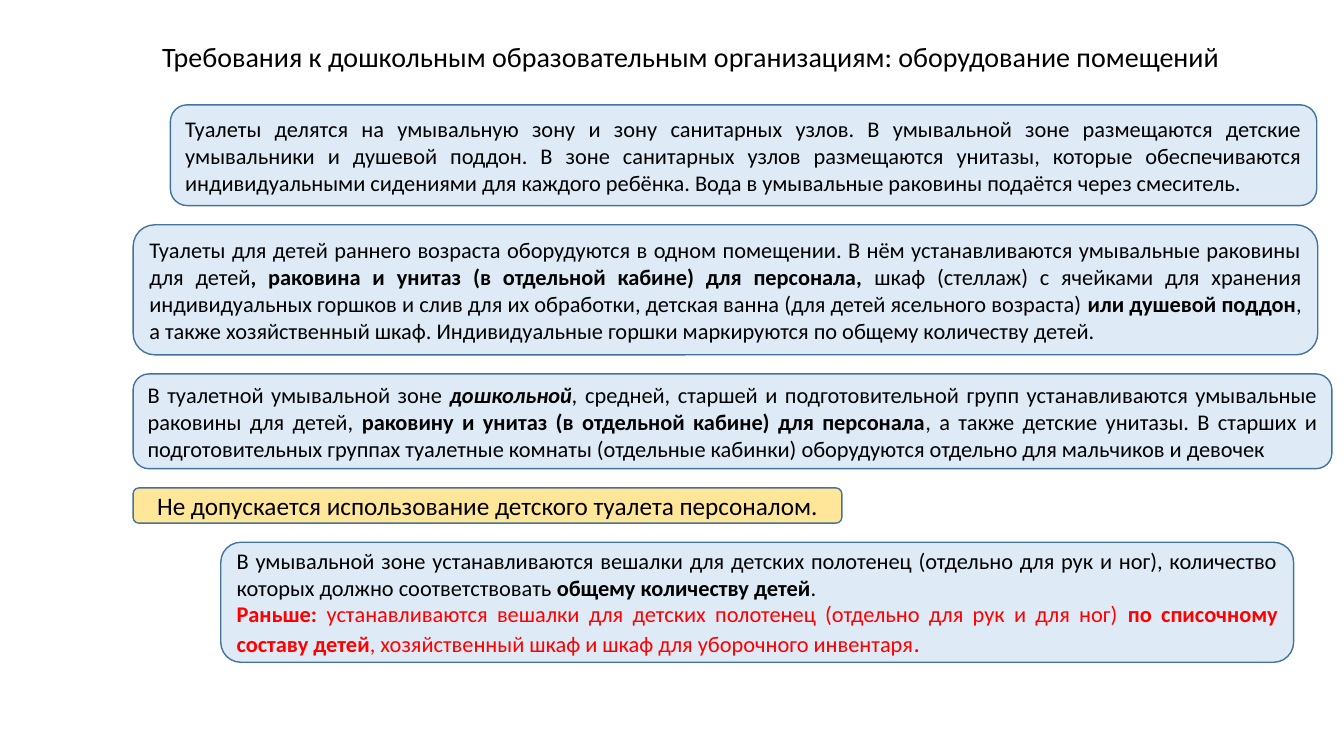
import pptx
import pptx.dml.color
import pptx.enum.shapes
import pptx.enum.text
import pptx.util

Inches = pptx.util.Inches
RGBColor = pptx.dml.color.RGBColor
ALIGN = pptx.enum.text.PP_ALIGN

BLACK = RGBColor(0x00, 0x00, 0x00)
RED = RGBColor(0xFF, 0x00, 0x00)
PALE_BLUE = RGBColor(0xDE, 0xEB, 0xF7)
PALE_YELLOW = RGBColor(0xFF, 0xE6, 0x99)
OUTLINE = RGBColor(0x43, 0x73, 0x9E)

BOLD = {"bold": True}
ITALIC = {"italic": True}
BOLD_ITALIC = {"bold": True, "italic": True}

TITLE = "Требования к дошкольным образовательным организациям: оборудование помещений"

# Each paragraph is a list of (text, format) runs
ZONES = [[
    ("Туалеты делятся на умывальную зону и зону санитарных узлов. В умывальной зоне "
     "размещаются детские умывальники и душевой поддон. В зоне санитарных узлов "
     "размещаются унитазы, которые обеспечиваются индивидуальными сидениями для "
     "каждого ребёнка. Вода в умывальные раковины подаётся через смеситель. ", {}),
]]
EARLY_AGE = [[
    ("Туалеты для детей раннего возраста оборудуются в одном помещении. В нём "
     "устанавливаются умывальные раковины для детей", {}),
    (", раковина и унитаз (в отдельной кабине) для персонала, ", BOLD),
    ("шкаф (стеллаж) с ячейками для хранения индивидуальных горшков и слив для их "
     "обработки, детская ванна (для детей ясельного возраста) ", {}),
    ("или душевой поддон", BOLD),
    (", а также хозяйственный шкаф. Индивидуальные горшки маркируются по общему "
     "количеству детей.", {}),
]]
PRESCHOOL = [[
    ("В туалетной умывальной зоне ", {}),
    ("дошкольной", BOLD_ITALIC),
    (",", ITALIC),
    (" средней, старшей и подготовительной групп устанавливаются умывальные раковины "
     "для детей, ", {}),
    ("раковину и унитаз (в отдельной кабине) для персонала", BOLD),
    (", а также детские унитазы. В старших и подготовительных группах туалетные "
     "комнаты (отдельные кабинки) оборудуются отдельно для мальчиков и девочек", {}),
]]
BAN = [[("Не допускается использование детского туалета персоналом.", {})]]
TOWELS = [
    [
        ("В умывальной зоне устанавливаются вешалки для детских полотенец (отдельно для "
         "рук и ног), количество которых должно соответствовать ", {}),
        ("общему количеству детей", BOLD),
        (".", {}),
    ],
    [
        ("Раньше:", {"bold": True, "color": RED}),
        (" устанавливаются вешалки для детских полотенец (отдельно для рук и для ног) ",
         {"color": RED}),
        ("по списочному составу детей", {"bold": True, "color": RED}),
        (", хозяйственный шкаф и шкаф для уборочного инвентаря", {"color": RED}),
        (".", {"size": 18, "color": RED}),
    ],
]

# Left, width, height, fill, alignment, text size, paragraphs
PANELS = [
    (1.69, 11.37, 1.0, PALE_BLUE, ALIGN.JUSTIFY, 16, ZONES),
    (1.32, 11.75, 1.29, PALE_BLUE, ALIGN.JUSTIFY, 16, EARLY_AGE),
    (1.32, 11.89, 0.94, PALE_BLUE, ALIGN.JUSTIFY, 16, PRESCHOOL),
    (1.32, 7.03, 0.35, PALE_YELLOW, ALIGN.CENTER, 18, BAN),
    (2.19, 10.64, 1.19, PALE_BLUE, ALIGN.JUSTIFY, 16, TOWELS),
]
PANELS_TOP = 1.04
PANEL_GAP = 0.19


def write_text(text_frame, paragraphs, size, **paragraph_format):
    text_frame.word_wrap = True
    text_frame.vertical_anchor = pptx.enum.text.MSO_ANCHOR.MIDDLE
    for index, runs in enumerate(paragraphs):
        paragraph = text_frame.paragraphs[0] if index == 0 else text_frame.add_paragraph()
        for name, value in paragraph_format.items():
            setattr(paragraph, name, value)
        for text, changes in runs:
            run = paragraph.add_run()
            run.text = text
            values = {"name": "Calibri", "size": size, "bold": False,
                      "italic": False, "color": BLACK} | changes
            run.font.color.rgb = values.pop("color")
            values["size"] = pptx.util.Pt(values["size"])
            for name, value in values.items():
                setattr(run.font, name, value)


def add_title(slide, left, top, width, height):
    box = slide.shapes.add_textbox(*map(Inches, (left, top, width, height)))
    write_text(box.text_frame, [[(TITLE, {})]], 20,
               alignment=ALIGN.LEFT, line_spacing=0.9)


def add_panel(slide, left, top, width, height, fill, alignment, size, paragraphs):
    shape = slide.shapes.add_shape(
        pptx.enum.shapes.MSO_SHAPE.ROUNDED_RECTANGLE,
        *map(Inches, (left, top, width, height)))
    shape.shadow.inherit = False
    shape.fill.solid()
    shape.fill.fore_color.rgb = fill
    shape.line.color.rgb = OUTLINE
    shape.line.width = pptx.util.Pt(1)
    write_text(shape.text_frame, paragraphs, size, alignment=alignment)


def add_panel_stack(slide, top):
    for left, width, height, *style in PANELS:
        add_panel(slide, left, top, width, height, *style)
        top += height + PANEL_GAP


def main():
    presentation = pptx.Presentation()
    presentation.slide_width = Inches(13.33)
    presentation.slide_height = Inches(7.5)
    slide = presentation.slides.add_slide(presentation.slide_layouts[6])
    add_title(slide, 1.51, 0.2, 11.56, 0.76)
    add_panel_stack(slide, PANELS_TOP)
    presentation.save("out.pptx")


if __name__ == "__main__":
    main()
